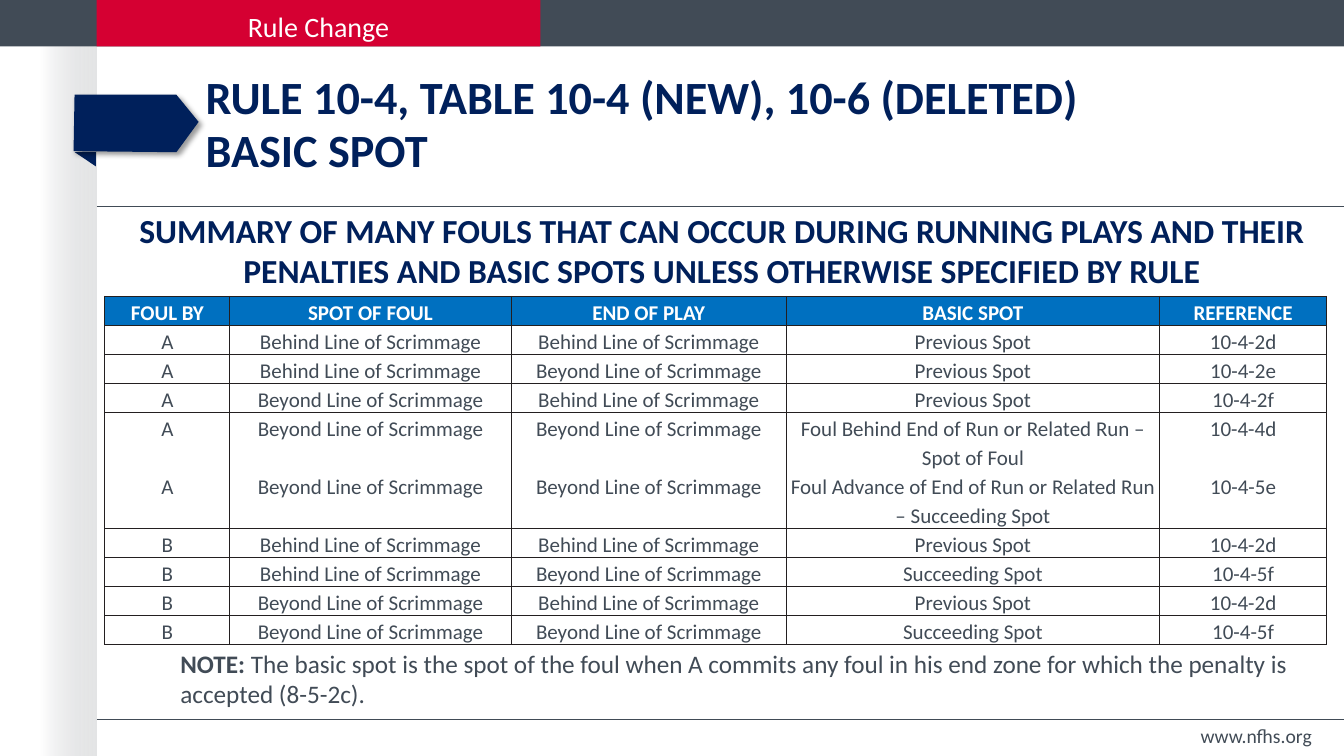
import pptx
import pptx.dml.color
import pptx.enum.dml
import pptx.enum.shapes
import pptx.enum.text
import pptx.oxml
import pptx.oxml.ns
import pptx.util
from pptx.util import Inches

COLORS = {
    "slate": "414B56",
    "red": "D50032",
    "navy": "00205B",
    "blue": "0070C0",
    "white": "FFFFFF",
    "border": "231F20",
    "fold_start": "C8C9CC",
    "fold_end": "E4E5E6",
}
ALIGN = pptx.enum.text.PP_ALIGN
ANCHOR = pptx.enum.text.MSO_ANCHOR
AUTO_SIZE = pptx.enum.text.MSO_AUTO_SIZE
NSDECLS = pptx.oxml.ns.nsdecls("a")

HEADER = ["FOUL BY", "SPOT OF FOUL", "END OF PLAY", "BASIC SPOT", "REFERENCE"]
BEHIND = "Behind Line of Scrimmage"
BEYOND = "Beyond Line of Scrimmage"
PREVIOUS = "Previous Spot"
SUCCEEDING = "Succeeding Spot"
FOULS = [
    ["A", BEHIND, BEHIND, PREVIOUS, "10-4-2d"],
    ["A", BEHIND, BEYOND, PREVIOUS, "10-4-2e"],
    ["A", BEYOND, BEHIND, PREVIOUS, "10-4-2f"],
    ["A", BEYOND, BEYOND, "Foul Behind End of Run or Related Run – Spot of Foul", "10-4-4d"],
    ["A", BEYOND, BEYOND, "Foul Advance of End of Run or Related Run – Succeeding Spot", "10-4-5e"],
    ["B", BEHIND, BEHIND, PREVIOUS, "10-4-2d"],
    ["B", BEHIND, BEYOND, SUCCEEDING, "10-4-5f"],
    ["B", BEYOND, BEHIND, PREVIOUS, "10-4-2d"],
    ["B", BEYOND, BEYOND, SUCCEEDING, "10-4-5f"],
]
COLUMN_WIDTHS = [1.24, 2.79, 2.73, 3.7, 1.66]
SPLIT_ROWS = (4, 5)  # two-line rows with no rule between them


def rgb(name):
    return pptx.dml.color.RGBColor.from_string(COLORS[name])


class RuleSlide:
    font_name = "Calibri"

    def __init__(self, presentation):
        self.slide = presentation.slides.add_slide(presentation.slide_layouts[5])
        self.shapes = self.slide.shapes

    def style(self, paragraph, size, color, bold=False, align=ALIGN.LEFT):
        paragraph.alignment = align
        font = paragraph.font
        font.name = self.font_name
        font.size = pptx.util.Pt(size)
        font.bold = bold
        font.color.rgb = rgb(color)

    def paint(self, shape, color):
        shape.shadow.inherit = False
        shape.line.fill.background()
        shape.fill.solid()
        shape.fill.fore_color.rgb = rgb(color)

    def bar(self, left, top, width, height, color):
        bar = self.shapes.add_shape(
            pptx.enum.shapes.MSO_SHAPE.RECTANGLE,
            Inches(left), Inches(top), Inches(width), Inches(height))
        self.paint(bar, color)
        return bar

    def page_fold(self, left, top, width, height):
        """Strip that fades from transparent at the left to grey at the right."""
        fold = self.bar(left, top, width, height, "fold_end")
        fold.fill.gradient()
        fold.fill.gradient_angle = 0
        for stop, color in zip(fold.fill.gradient_stops, ("fold_start", "fold_end")):
            stop.color.rgb = rgb(color)
        clear = fold.fill.gradient_stops[0]
        color_element = fold.element.spPr.find(".//" + pptx.oxml.ns.qn("a:srgbClr"))
        clear.position = 0
        color_element.append(pptx.oxml.parse_xml(f'<a:alpha {NSDECLS} val="0"/>'))

    def divider(self, top, left=0.96, right=13.33):
        divider = self.shapes.add_connector(
            pptx.enum.shapes.MSO_CONNECTOR.STRAIGHT,
            Inches(left), Inches(top), Inches(right), Inches(top))
        divider.line.color.rgb = rgb("slate")
        divider.line.width = pptx.util.Pt(1)
        divider.element.spPr.append(pptx.oxml.parse_xml(f"<a:effectLst {NSDECLS}/>"))

    def outline(self, points, color):
        corners = [(Inches(x), Inches(y)) for x, y in points]
        builder = self.shapes.build_freeform(*corners[0])
        builder.add_line_segments(corners[1:], close=True)
        outline = builder.convert_to_shape()
        self.paint(outline, color)
        return outline

    def ribbon(self):
        self.outline([(0.74, 1.51), (0.95, 1.51), (0.95, 1.65)], "navy")
        tag = self.outline(
            [(0.74, 0.94), (0.73, 1.5), (1.75, 1.51), (1.97, 1.21), (1.75, 0.94)], "navy")
        effects = tag.element.spPr.find(pptx.oxml.ns.qn("a:effectLst"))
        effects.append(pptx.oxml.parse_xml(
            f'<a:outerShdw {NSDECLS} blurRad="50800" dist="38100" dir="2700000" '
            'algn="tl" rotWithShape="0"><a:srgbClr val="000000">'
            '<a:alpha val="40000"/></a:srgbClr></a:outerShdw>'))

    def title(self, first_line, second_line):
        title = self.shapes.title
        title.left, title.top = Inches(1.94), Inches(0.57)
        title.width, title.height = Inches(11.32), Inches(1.32)
        frame = title.text_frame
        frame.auto_size = AUTO_SIZE.NONE
        frame.vertical_anchor = ANCHOR.MIDDLE
        paragraph = frame.paragraphs[0]
        paragraph.add_run().text = first_line
        paragraph.add_line_break()
        paragraph.add_run().text = second_line
        paragraph.line_spacing = pptx.util.Pt(38)
        self.style(paragraph, 33, "navy", bold=True)

    def text(self, words, left, top, width, height, size, color, bold=False,
             align=ALIGN.LEFT, anchor=ANCHOR.TOP, lead=None):
        """Add a text box; lead is an optional bold opening."""
        box = self.shapes.add_textbox(
            Inches(left), Inches(top), Inches(width), Inches(height))
        frame = box.text_frame
        frame.word_wrap = True
        frame.vertical_anchor = anchor
        paragraph = frame.paragraphs[0]
        if lead:
            opening = paragraph.add_run()
            opening.text = lead
            opening.font.bold = True
        paragraph.add_run().text = words
        self.style(paragraph, size, color, bold, align)

    def cell_borders(self, cell, hidden):
        properties = cell._tc.get_or_add_tcPr()
        for index, side in enumerate("LRTB"):
            fill = ("<a:noFill/>" if side == hidden else
                    f'<a:solidFill><a:srgbClr val="{COLORS["border"]}"/></a:solidFill>')
            properties.insert(index, pptx.oxml.parse_xml(
                f'<a:ln{side} {NSDECLS} w="12700">{fill}</a:ln{side}>'))

    def foul_table(self, left, top):
        rows = [HEADER] + FOULS
        table = self.shapes.add_table(
            len(rows), len(HEADER), Inches(left), Inches(top),
            Inches(sum(COLUMN_WIDTHS)), Inches(3.3)).table
        table.horz_banding = False
        for column, width in zip(table.columns, COLUMN_WIDTHS):
            column.width = Inches(width)
        for row_index, entries in enumerate(rows):
            is_header = row_index == 0
            table.rows[row_index].height = Inches(0.56 if row_index in SPLIT_ROWS else 0.27)
            hidden = dict(zip(SPLIT_ROWS, "BT")).get(row_index)
            for column_index, entry in enumerate(entries):
                cell = table.cell(row_index, column_index)
                cell.margin_left = cell.margin_right = 0
                cell.margin_top = cell.margin_bottom = 0
                if is_header:
                    cell.fill.solid()
                    cell.fill.fore_color.rgb = rgb("blue")
                else:
                    cell.fill.background()
                self.cell_borders(cell, hidden)
                paragraph = cell.text_frame.paragraphs[0]
                paragraph.text = entry
                paragraph.line_spacing = 1.15
                self.style(paragraph, 15, "white" if is_header else "slate",
                           is_header, ALIGN.CENTER)


def main():
    presentation = pptx.Presentation()
    presentation.slide_width = Inches(13.33)
    presentation.slide_height = Inches(7.5)
    page = RuleSlide(presentation)
    page.page_fold(0.4, 0.45, 0.56, 7.05)
    page.bar(0, 0, 13.33, 0.46, "slate")
    page.bar(0.96, 0, 4.4, 0.46, "red")
    for top in (2.05, 7.14):
        page.divider(top)
    page.ribbon()
    page.text("Rule Change", 0.96, 0.05, 4.4, 0.44, 20, "white", align=ALIGN.CENTER)
    page.text("www.nfhs.org", 10.93, 7.14, 2.18, 0.32, 14, "slate",
              align=ALIGN.RIGHT, anchor=ANCHOR.MIDDLE)
    page.title("RULE 10-4, TABLE 10-4 (NEW), 10-6 (DELETED)", "BASIC SPOT")
    page.text("The basic spot is the spot of the foul when A commits any foul in his end "
              "zone for which the penalty is accepted (8-5-2c).",
              1.69, 6.38, 11.32, 0.55, 18, "slate", lead="NOTE: ")
    page.foul_table(1.04, 2.94)
    page.text("SUMMARY OF MANY FOULS THAT CAN OCCUR DURING RUNNING PLAYS AND THEIR "
              "PENALTIES AND BASIC SPOTS UNLESS OTHERWISE SPECIFIED BY RULE",
              1.14, 2.03, 12.04, 0.91, 24, "navy", bold=True, align=ALIGN.CENTER)
    presentation.save("out.pptx")


if __name__ == "__main__":
    main()
